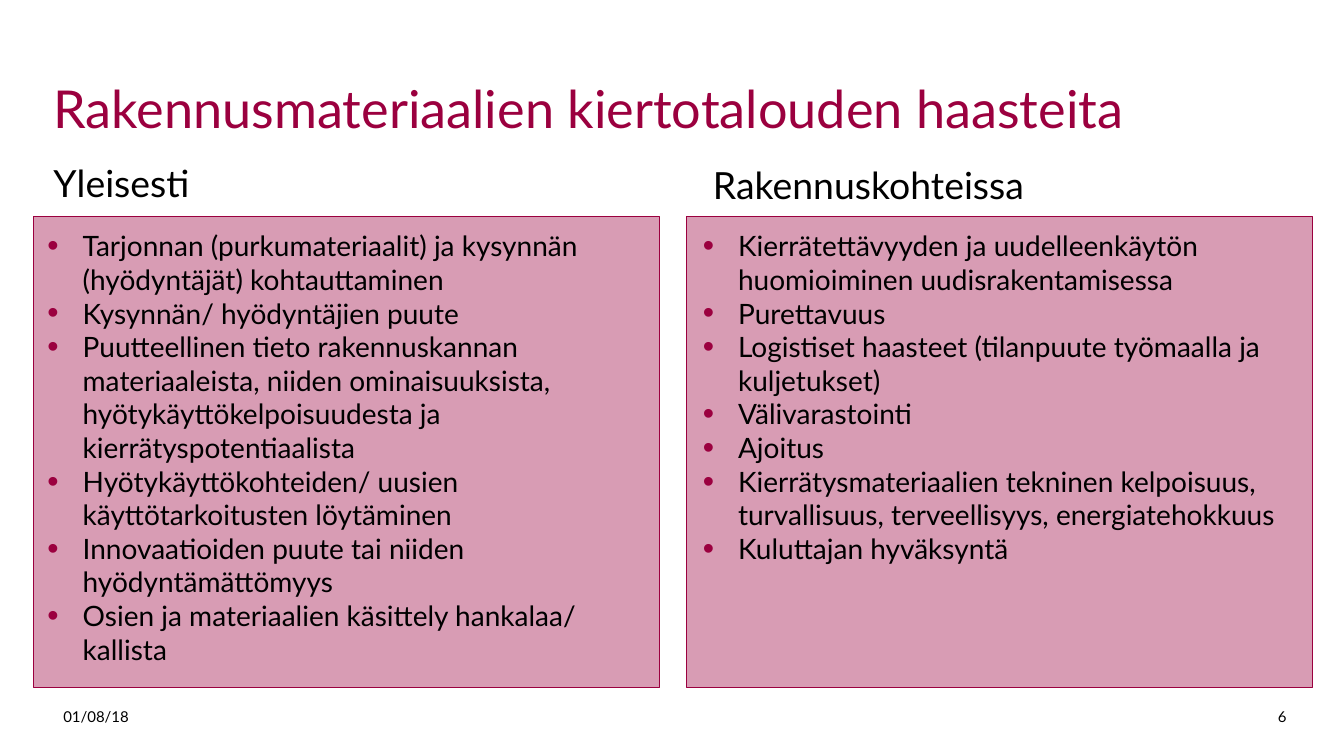
from lxml import etree
from pptx import Presentation
from pptx.dml.color import RGBColor
from pptx.enum.shapes import MSO_SHAPE
from pptx.enum.text import MSO_ANCHOR, MSO_AUTO_SIZE, PP_ALIGN
from pptx.oxml.ns import qn
from pptx.util import Inches, Pt

RECT = MSO_SHAPE.RECTANGLE
TOP, BOTTOM = MSO_ANCHOR.TOP, MSO_ANCHOR.BOTTOM
LEFT, RIGHT = PP_ALIGN.LEFT, PP_ALIGN.RIGHT
COLORS = {"accent": "9B003F", "text": "000000"}
FONT = "Lato"
INDENT = Inches(0.35)

columns = [
    {
        "panel_x": 0.33, "list_x": 0.47, "heading": "Yleisesti", "heading_at": (0.53, 1.33),
        "items": [
            "Tarjonnan (purkumateriaalit) ja kysynnän (hyödyntäjät) kohtauttaminen",
            "Kysynnän/ hyödyntäjien puute",
            "Puutteellinen tieto rakennuskannan materiaaleista, niiden ominaisuuksista, "
            "hyötykäyttökelpoisuudesta ja kierrätyspotentiaalista",
            "Hyötykäyttökohteiden/ uusien käyttötarkoitusten löytäminen",
            "Innovaatioiden puute tai niiden hyödyntämättömyys",
            "Osien ja materiaalien käsittely hankalaa/ kallista",
        ],
    },
    {
        "panel_x": 6.81, "list_x": 6.97, "heading": "Rakennuskohteissa", "heading_at": (7.07, 1.35),
        "items": [
            "Kierrätettävyyden ja uudelleenkäytön huomioiminen uudisrakentamisessa",
            "Purettavuus",
            "Logistiset haasteet (tilanpuute työmaalla ja kuljetukset)",
            "Välivarastointi",
            "Ajoitus",
            "Kierrätysmateriaalien tekninen kelpoisuus, turvallisuus, terveellisyys, energiatehokkuus",
            "Kuluttajan hyväksyntä",
        ],
    },
]


def write(sp, lines, size, color="text", anchor=TOP, align=LEFT, inset=(0, 0), bullets=False):
    tf = sp.text_frame
    side, edge = map(Inches, inset)
    frame = {"word_wrap": True, "auto_size": MSO_AUTO_SIZE.NONE, "vertical_anchor": anchor,
             "margin_left": side, "margin_right": side, "margin_top": edge, "margin_bottom": edge}
    for name, value in frame.items():
        setattr(tf, name, value)
    for i, line in enumerate(lines):
        p = tf.paragraphs[0] if i == 0 else tf.add_paragraph()
        p.alignment = align
        if bullets:
            pPr = p._p.get_or_add_pPr()
            pPr.set("marL", str(INDENT))
            pPr.set("indent", str(-INDENT))
            buClr = etree.SubElement(pPr, qn("a:buClr"))
            etree.SubElement(buClr, qn("a:srgbClr"), val=COLORS["accent"])
            etree.SubElement(pPr, qn("a:buSzPct"), val="115000")
            etree.SubElement(pPr, qn("a:buFont"), typeface="Arial")
            etree.SubElement(pPr, qn("a:buChar"), char="•")
        r = p.add_run()
        r.text = line
        r.font.name = FONT
        r.font.size = Pt(size)
        r.font.color.rgb = RGBColor.from_string(COLORS[color])


def add_text(x, y, w, h, lines, size, **style):
    sp = s.shapes.add_textbox(Inches(x), Inches(y), Inches(w), Inches(h))
    write(sp, lines, size, **style)


prs = Presentation()
prs.slide_width, prs.slide_height = Inches(13.33), Inches(7.5)
s = prs.slides.add_slide(prs.slide_layouts[5])

# Title
title = s.shapes.title
title.left, title.top, title.width, title.height = map(Inches, (0.53, 0.13, 11.14, 1.25))
write(title, ["Rakennusmateriaalien kiertotalouden haasteita"], 37.3, color="accent", anchor=BOTTOM)

# Columns: tinted panel, heading and bullet list
accent = RGBColor.from_string(COLORS["accent"])
for col in columns:
    panel = s.shapes.add_shape(RECT, Inches(col["panel_x"]), Inches(2.15), Inches(6.21), Inches(4.67))
    panel.shadow.inherit = False
    panel.fill.solid()
    panel.fill.fore_color.rgb = accent
    tint = panel._element.spPr.find(qn("a:solidFill")).find(qn("a:srgbClr"))
    etree.SubElement(tint, qn("a:alpha"), val="39000")
    panel.line.color.rgb = accent
    panel.line.width = Pt(0.5)
    add_text(*col["heading_at"], 5.89, 0.7, [col["heading"]], 26.7, anchor=BOTTOM)
    add_text(col["list_x"], 2.27, 5.89, 4.03, col["items"], 20, bullets=True)

# Footer: date and slide number
add_text(0.53, 6.97, 1.27, 0.4, ["01/08/18"], 10.7, inset=(0.1, 0.05))
add_text(12.31, 6.97, 0.55, 0.4, ["6"], 10.7, align=RIGHT, inset=(0.1, 0.05))

prs.save("out.pptx")
